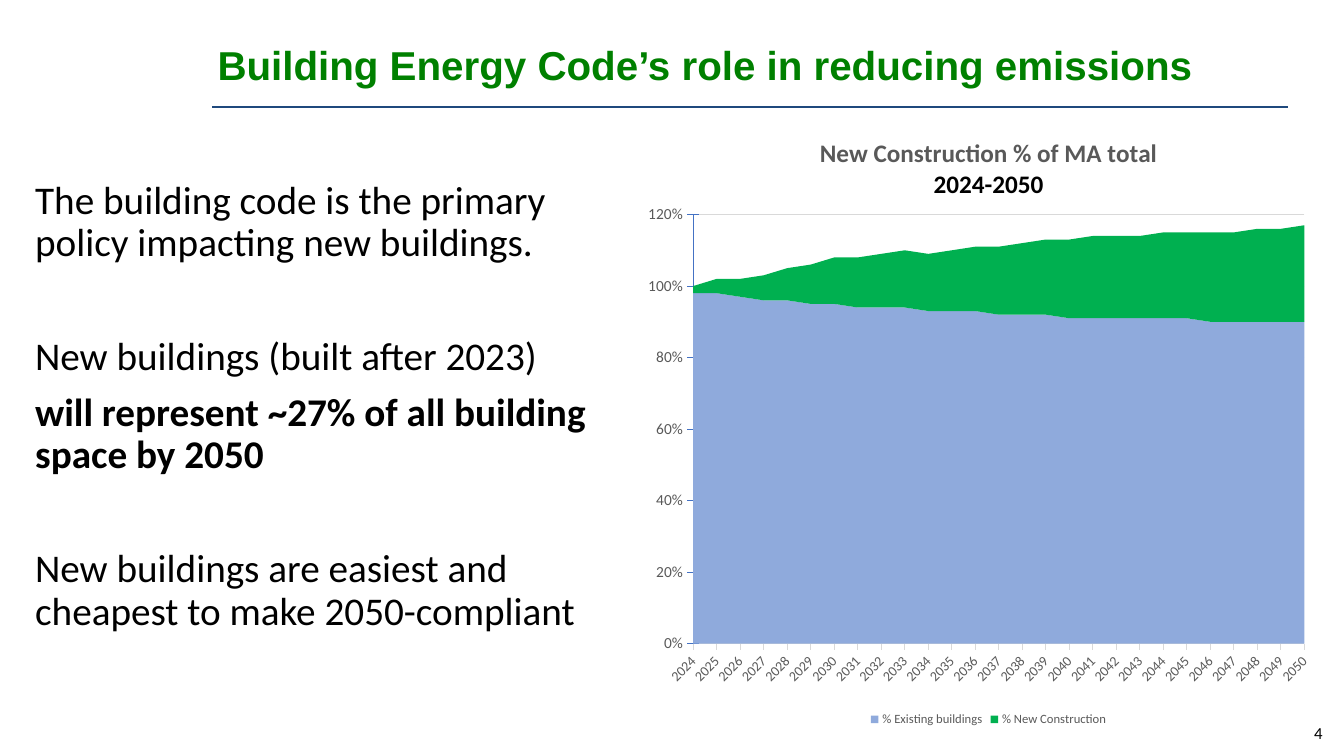
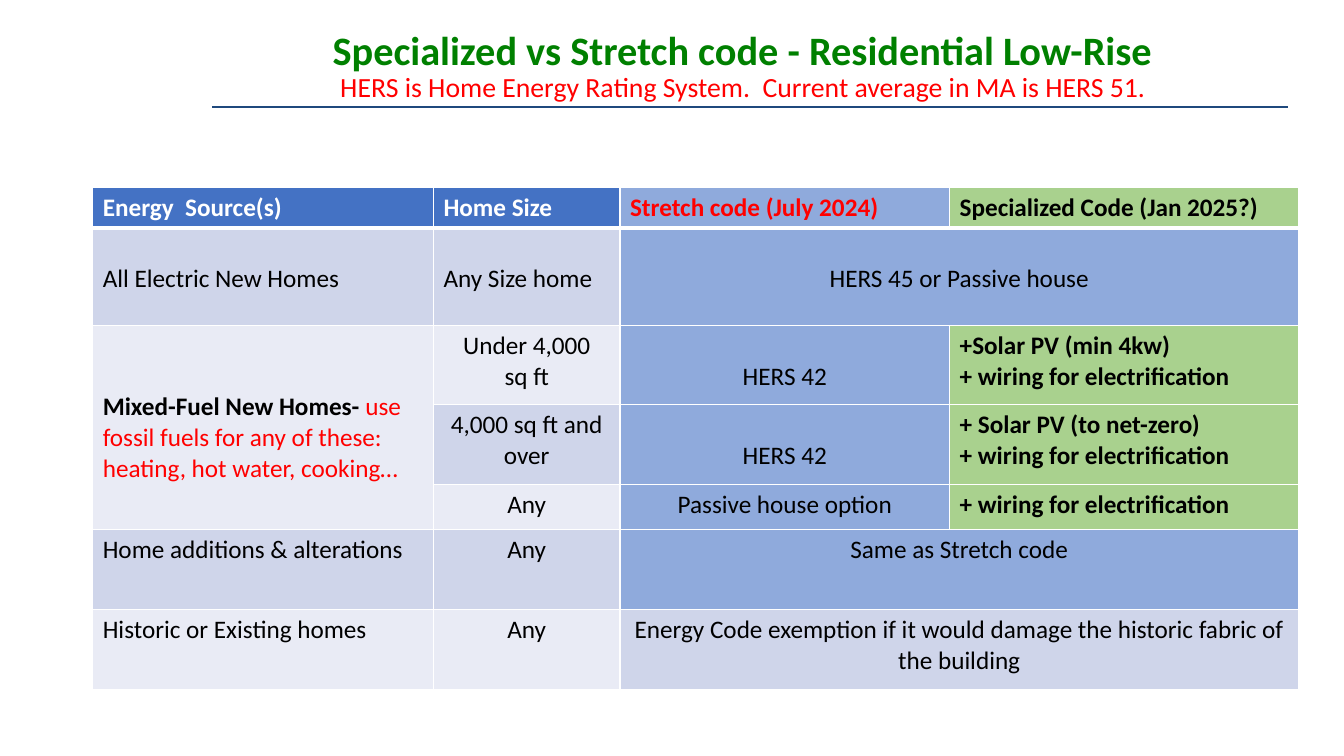
import pptx
import pptx.util
import pptx.chart.data
import pptx.dml.color
import pptx.enum.chart
import pptx.enum.shapes
import pptx.enum.text
import pptx.oxml
import pptx.oxml.ns
from lxml import etree

Pt, Inches = pptx.util.Pt, pptx.util.Inches
RGBColor = pptx.dml.color.RGBColor
qn = pptx.oxml.ns.qn
ALIGN, ANCHOR = pptx.enum.text.PP_ALIGN, pptx.enum.text.MSO_ANCHOR
XL = pptx.enum.chart

# Colours
BLACK, WHITE = RGBColor(0, 0, 0), RGBColor(255, 255, 255)
GREEN, RED = RGBColor(0, 0x80, 0), RGBColor(255, 0, 0)
NAVY, BLUE = RGBColor(0x1F, 0x49, 0x7D), RGBColor(0x44, 0x72, 0xC4)
SKY, LEAF = RGBColor(0x8F, 0xAA, 0xDC), RGBColor(0xA9, 0xD1, 0x8E)
BAND, PALE = RGBColor(0xCF, 0xD5, 0xEA), RGBColor(0xE9, 0xEB, 0xF5)
GREY, GRID = RGBColor(0x59, 0x59, 0x59), RGBColor(0xD9, 0xD9, 0xD9)
EMERALD = RGBColor(0, 0xB0, 0x50)

# Places: left, top, width, height in hundredths of the slide
W, H = Inches(13.33), Inches(7.5)
TITLE_AT = (15.45, 3.33, 79.6, 11.07)
RULE_AT = (15.8, 14.15, 80.05, 0)
BODY_AT = (1.88, 23.2, 46.2, 76.8)
NUMBER_AT = (92.5, 94.27, 6.65, 5.33)
CHART_AT = (48, 14.4, 51.1, 82.27)
TABLE_AT = (6.9, 24.8, 89.72, 66.4)

# Text formats
HEAD = dict(name="Calibri", size=Pt(28.8), bold=True, color=GREEN)
HEAD_ARIAL = dict(HEAD, name="Arial")
SUBHEAD = dict(HEAD, size=Pt(19.8), bold=False, color=RED)
BODY = dict(name="Calibri", size=Pt(28), bold=False, color=BLACK)
BODY_BOLD = dict(BODY, bold=True)
NUMBER = dict(BODY, size=Pt(12))
CELL = dict(BODY, size=Pt(18))
CELL_BOLD = dict(CELL, bold=True)
CELL_RED = dict(CELL, color=RED)
CELL_HEAD = dict(CELL_BOLD, color=WHITE)
CHART_TITLE = dict(CELL_BOLD, color=GREY)
AXIS_X = dict(NUMBER, size=Pt(10), color=GREY)
AXIS_Y = dict(AXIS_X, size=Pt(11))
LEGEND = dict(AXIS_X, size=Pt(9))

# Slide 1: space before in points, text, format
POINTS = [
    (0, "The building code is the primary policy impacting new buildings.", BODY),
    (51, "New buildings (built after 2023)", BODY),
    (10, "will represent ~27% of all building space by 2050", BODY_BOLD),
    (51, "New buildings are easiest and cheapest to make 2050-compliant", BODY),
]
YEARS = [str(y) for y in range(2024, 2051)]
SERIES = [
    ("% Existing buildings", SKY,
     [.98, .98, .97, .96, .96, .95, .95, .94, .94, .94, .93, .93, .93, .92,
      .92, .92, .91, .91, .91, .91, .91, .91, .9, .9, .9, .9, .9]),
    ("% New Construction", EMERALD,
     [.02, .04, .05, .07, .09, .11, .13, .14, .15, .16, .16, .17, .18, .19,
      .2, .21, .22, .23, .23, .23, .24, .24, .25, .25, .26, .26, .27]),
]

# Slide 2: cells as row, column, rows, columns, fill, align, lines above, paragraphs
COL_SHARES = (3.38, 1.85, 3.27, 3.46)
ROW_SHARES = (.39, .96, .78, .79, .44, .79, .79)
LINE = 0.305
L, C = ALIGN.LEFT, ALIGN.CENTER
WIRING = [("+ wiring for electrification", CELL_BOLD)]
CELLS = [
    (0, 0, 1, 1, BLUE, L, 0, [[("Energy  Source(s)", CELL_HEAD)]]),
    (0, 1, 1, 1, BLUE, L, 0, [[("Home Size", CELL_HEAD)]]),
    (0, 2, 1, 1, SKY, L, 0, [[("Stretch code (July 2024)", dict(CELL_RED, bold=True))]]),
    (0, 3, 1, 1, LEAF, L, 0, [[("Specialized Code (Jan 2025?)", CELL_BOLD)]]),
    (1, 0, 1, 1, BAND, L, 1, [[("All Electric New Homes", CELL)]]),
    (1, 1, 1, 1, BAND, L, 1, [[("Any Size home", CELL)]]),
    (1, 2, 1, 2, SKY, C, 1, [[("HERS 45 or Passive house", CELL)]]),
    (2, 0, 3, 1, PALE, L, 2, [[
        ("Mixed-Fuel New Homes- ", CELL_BOLD),
        ("use fossil fuels for any of these: heating, hot water, cooking…", CELL_RED)]]),
    (2, 1, 1, 1, PALE, C, 0, [[("Under 4,000", CELL)], [("sq ft", CELL)]]),
    (2, 2, 1, 1, SKY, C, 1, [[("HERS 42", CELL)]]),
    (2, 3, 1, 1, LEAF, L, 0, [[("+Solar PV (min 4kw)", CELL_BOLD)], WIRING]),
    (3, 1, 1, 1, BAND, C, 0, [[("4,000 sq ft and over", CELL)]]),
    (3, 2, 1, 1, SKY, C, 1, [[("HERS 42", CELL)]]),
    (3, 3, 1, 1, LEAF, L, 0, [[("+ Solar PV (to net-zero)", CELL_BOLD)], WIRING]),
    (4, 1, 1, 1, PALE, C, 0, [[("Any", CELL)]]),
    (4, 2, 1, 1, SKY, C, 0, [[("Passive house option", CELL)]]),
    (4, 3, 1, 1, LEAF, L, 0, [WIRING]),
    (5, 0, 1, 1, BAND, L, 0, [[("Home additions & alterations", CELL)]]),
    (5, 1, 1, 1, BAND, C, 0, [[("Any", CELL)]]),
    (5, 2, 1, 2, SKY, C, 0, [[("Same as Stretch code", CELL)]]),
    (6, 0, 1, 1, PALE, L, 0, [[("Historic or Existing homes", CELL)]]),
    (6, 1, 1, 1, PALE, C, 0, [[("Any", CELL)]]),
    (6, 2, 1, 2, BAND, C, 0, [[
        ("Energy Code exemption if it would damage the historic fabric of the building", CELL)]]),
]


def place(at):
    return [int(v * side / 100) for v, side in zip(at, (W, H, W, H))]


def style(font, fmt):
    for key, value in fmt.items():
        if key == "color":
            font.color.rgb = value
        else:
            setattr(font, key, value)


def write(tf, paragraphs, **fmt):
    """Fill a text frame; fmt holds paragraph format values."""
    for i, runs in enumerate(paragraphs):
        p = tf.paragraphs[0] if i == 0 else tf.add_paragraph()
        for key, value in fmt.items():
            setattr(p, key, value)
        for text, font in runs:
            r = p.add_run()
            r.text = text
            style(r.font, font)


def add_text(s, at, paragraphs, anchor=ANCHOR.MIDDLE, **fmt):
    tf = s.shapes.add_textbox(*place(at)).text_frame
    tf.word_wrap = True
    tf.vertical_anchor = anchor
    write(tf, paragraphs, **fmt)
    return tf


def add_slide(prs, title_runs, align):
    """Blank slide with the shared title and the rule beneath it."""
    s = prs.slides.add_slide(prs.slide_layouts[6])
    x, y, w, _ = place(RULE_AT)
    rule = s.shapes.add_connector(pptx.enum.shapes.MSO_CONNECTOR.STRAIGHT, x, y, x + w, y)
    rule.line.color.rgb, rule.line.width = NAVY, Pt(1.5)
    etree.SubElement(rule.element.spPr, qn("a:effectLst"))
    tf = add_text(s, TITLE_AT, [title_runs[:1]], alignment=align, line_spacing=0.9)
    p = tf.paragraphs[0]
    for text, font in title_runs[1:]:
        p.add_line_break()
        r = p.add_run()
        r.text = text
        style(r.font, font)
    return s


def set_layout(parent, before, x, y, w=None, h=None, inner=False):
    """Manual position of a chart part, in shares of the chart."""
    for old in parent.findall(qn("c:layout")):
        parent.remove(old)
    layout = etree.Element(qn("c:layout"))
    manual = etree.SubElement(layout, qn("c:manualLayout"))
    items = [("layoutTarget", "inner")] if inner else []
    items += [("xMode", "edge"), ("yMode", "edge"), ("x", x), ("y", y), ("w", w), ("h", h)]
    for tag, value in items:
        if value is not None:
            etree.SubElement(manual, qn("c:" + tag)).set("val", str(value))
    parent.insert(before, layout)


def add_area_chart(s):
    data = pptx.chart.data.CategoryChartData(number_format="0%")
    data.categories = YEARS
    for name, _, values in SERIES:
        data.add_series(name, values)
    chart = s.shapes.add_chart(XL.XL_CHART_TYPE.AREA_STACKED, *place(CHART_AT), data).chart
    style(chart.font, dict(NUMBER, size=Pt(10)))
    for ser, (_, color, _) in zip(chart.plots[0].series, SERIES):
        ser.format.fill.solid()
        ser.format.fill.fore_color.rgb = color

    # Title and plot area
    chart.has_title = True
    write(chart.chart_title.text_frame,
          [[("New Construction % of MA total", CHART_TITLE)], [("2024-2050", CELL_BOLD)]])
    chart.chart_title.include_in_layout = False
    set_layout(chart.chart_title._element, 1, .25, .04)
    set_layout(chart._chartSpace.chart.plotArea, 0, .07, .17, .89, .69, inner=True)

    # Axes
    tick = XL.XL_TICK_MARK
    for axis, font, color, mark in ((chart.category_axis, AXIS_X, GRID, tick.OUTSIDE),
                                    (chart.value_axis, AXIS_Y, BLUE, tick.CROSS)):
        style(axis.tick_labels.font, font)
        axis.format.line.color.rgb, axis.format.line.width = color, Pt(.75)
        axis.major_tick_mark, axis.minor_tick_mark = mark, tick.NONE
    x_axis, y_axis = chart.category_axis, chart.value_axis
    x_axis.has_major_gridlines = False
    x_axis._element.find(qn("c:txPr")).find(qn("a:bodyPr")).set("rot", "-2700000")
    y_axis.minimum_scale, y_axis.maximum_scale, y_axis.major_unit = 0, 1.2, .2
    y_axis.tick_labels.number_format = "0%"
    y_axis.tick_labels.number_format_is_linked = False
    y_axis.has_major_gridlines = True
    grid = y_axis.major_gridlines.format.line
    grid.color.rgb, grid.width = GRID, Pt(.75)
    for cross in y_axis._element.findall(qn("c:crossBetween")):
        cross.set("val", "midCat")

    chart.has_legend = True
    chart.legend.position = XL.XL_LEGEND_POSITION.BOTTOM
    chart.legend.include_in_layout = False
    style(chart.legend.font, LEGEND)


def set_borders(cell, row):
    tcPr = cell._tc.get_or_add_tcPr()
    for i, side in enumerate("LRTB"):
        thick = (row, side) in ((0, "B"), (1, "T"))
        ln = etree.Element(qn("a:ln" + side), w=str(Pt(3 if thick else 1)))
        fill = etree.SubElement(ln, qn("a:solidFill"))
        etree.SubElement(fill, qn("a:srgbClr")).set("val", str(WHITE))
        tcPr.insert(i, ln)


def add_code_table(s):
    x, y, w, h = place(TABLE_AT)
    table = s.shapes.add_table(len(ROW_SHARES), len(COL_SHARES), x, y, w, h).table
    for col, share in zip(table.columns, COL_SHARES):
        col.width = int(w * share / sum(COL_SHARES))
    for row, share in zip(table.rows, ROW_SHARES):
        row.height = int(h * share / sum(ROW_SHARES))
    for r, c, rows, cols, fill, align, above, paragraphs in CELLS:
        cell = table.cell(r, c)
        if rows * cols > 1:
            cell.merge(table.cell(r + rows - 1, c + cols - 1))
        for i in range(r, r + rows):
            for j in range(c, c + cols):
                part = table.cell(i, j)
                set_borders(part, i)
                part.fill.solid()
                part.fill.fore_color.rgb = fill
        cell.margin_top = Inches(.05 + above * LINE)
        write(cell.text_frame, paragraphs, alignment=align)


def main():
    prs = pptx.Presentation()
    prs.slide_width, prs.slide_height = W, H

    # Emissions slide
    s = add_slide(prs, [("Building Energy Code’s role in reducing emissions", HEAD_ARIAL)], L)
    tf = add_text(s, BODY_AT, [[(text, font)] for _, text, font in POINTS],
                  ANCHOR.TOP, line_spacing=0.9)
    for p, (gap, _, _) in zip(tf.paragraphs, POINTS):
        p.space_before = Pt(gap)
    add_area_chart(s)
    add_text(s, NUMBER_AT, [[("4", NUMBER)]], alignment=ALIGN.RIGHT)

    # Code comparison slide
    s = add_slide(prs, [
        ("Specialized vs Stretch code - Residential Low-Rise", HEAD),
        ("HERS is Home Energy Rating System.  Current average in MA is HERS 51.", SUBHEAD)], C)
    add_code_table(s)

    prs.save("out.pptx")


if __name__ == "__main__":
    main()
